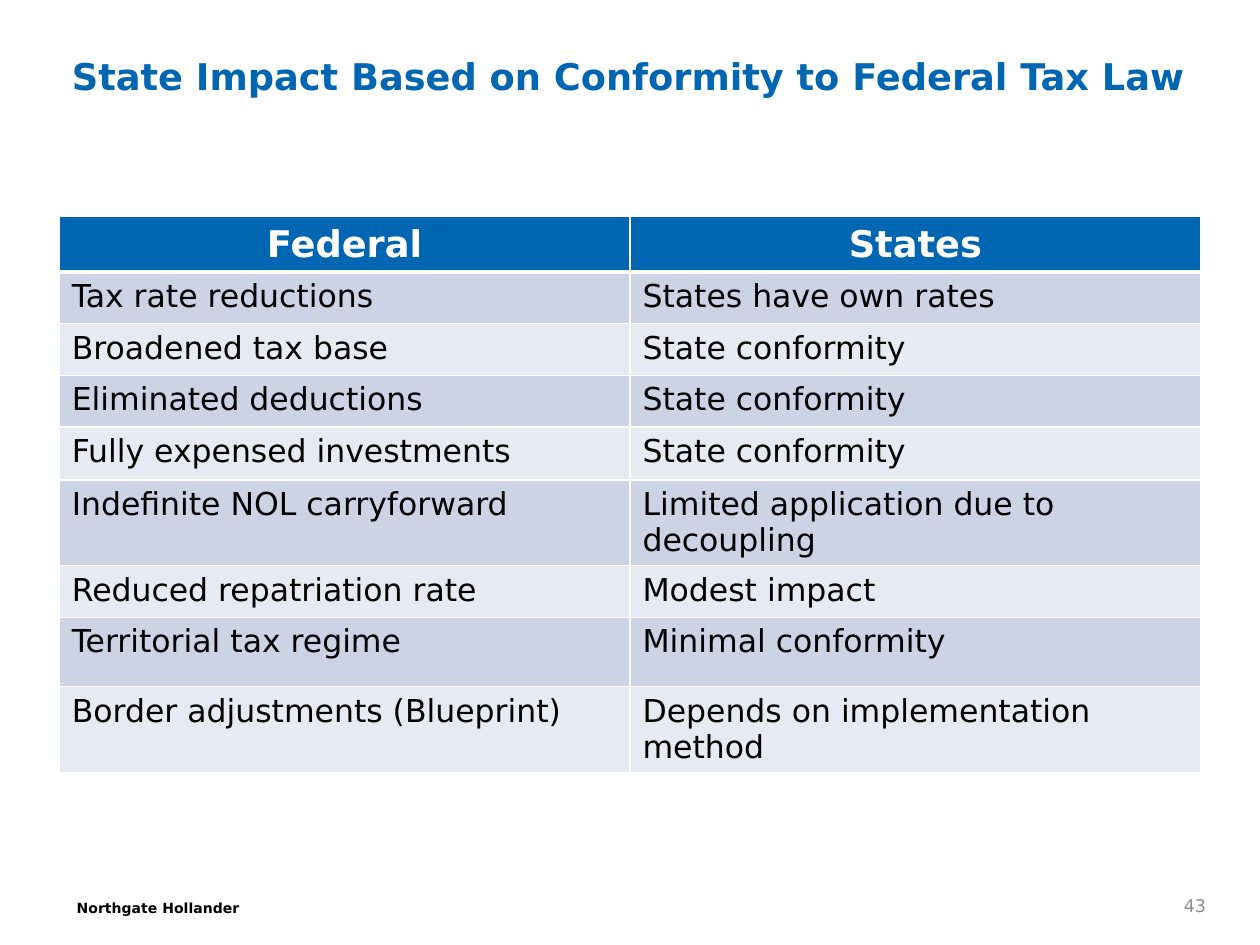
from lxml.etree import SubElement
from pptx import Presentation
from pptx.dml.color import RGBColor
from pptx.enum.text import MSO_ANCHOR, MSO_AUTO_SIZE, PP_ALIGN
from pptx.oxml.ns import qn
from pptx.util import Inches, Pt

COLORS = {
    "blue": "0066B2",
    "white": "FFFFFF",
    "black": "000000",
    "gray": "8C8C8C",
    "band_dark": "CCD3E4",
    "band_light": "E7EAF2",
}

COMPARISON = [
    ("Federal", "States"),
    ("Tax rate reductions", "States have own rates"),
    ("Broadened tax base", "State conformity"),
    ("Eliminated deductions", "State conformity"),
    ("Fully expensed investments", "State conformity"),
    ("Indefinite NOL carryforward", "Limited application due to decoupling"),
    ("Reduced repatriation rate", "Modest impact"),
    ("Territorial tax regime", "Minimal conformity"),
    ("Border adjustments (Blueprint)", "Depends on implementation method"),
]
ROW_HEIGHTS = [0.41, 0.41, 0.41, 0.41, 0.42, 0.41, 0.41, 0.55, 0.41]


class SlideBuilder:
    """Holds the style and the current slide."""

    font_name = "DejaVu Sans"

    def __init__(self, page):
        self.page = page

    def set_text(self, frame, text, size, color, bold=False,
                 align=PP_ALIGN.LEFT):
        frame.word_wrap = True
        para = frame.paragraphs[0]
        para.text = text
        para.alignment = align
        para.font.name = self.font_name
        para.font.size = Pt(size)
        para.font.bold = bold
        para.font.color.rgb = RGBColor.from_string(COLORS[color])
        return para

    def title(self, text, left, top, width, height):
        box = self.page.shapes.title
        box.left, box.top = Inches(left), Inches(top)
        box.width, box.height = Inches(width), Inches(height)
        frame = box.text_frame
        frame.auto_size = MSO_AUTO_SIZE.NONE
        frame.vertical_anchor = MSO_ANCHOR.MIDDLE
        para = self.set_text(frame, text, 21, "blue", bold=True)
        para.line_spacing = 0.9

    def label(self, text, left, top, width, height, size, color,
              anchor=MSO_ANCHOR.TOP, **style):
        box = self.page.shapes.add_textbox(
            Inches(left), Inches(top), Inches(width), Inches(height))
        box.text_frame.vertical_anchor = anchor
        self.set_text(box.text_frame, text, size, color, **style)

    def borders(self, cell, widths):
        properties = cell._tc.get_or_add_tcPr()
        for side, width in widths.items():
            line = SubElement(properties, qn(f"a:ln{side}"), w=str(Pt(width)))
            fill = SubElement(line, qn("a:solidFill"))
            SubElement(fill, qn("a:srgbClr"), val=COLORS["white"])

    def table(self, rows, heights, left, top, width):
        columns = len(rows[0])
        table = self.page.shapes.add_table(
            len(rows), columns, Inches(left), Inches(top),
            Inches(width), Inches(sum(heights))).table
        for column in table.columns:
            column.width = Inches(width / columns)
        for index, (texts, height) in enumerate(zip(rows, heights)):
            table.rows[index].height = Inches(height)
            for cell, text in zip(table.rows[index].cells, texts):
                self.cell(cell, text, index)

    def cell(self, cell, text, row):
        # The header has a heavy rule below; body rows alternate two tints
        self.borders(cell, {"L": 1, "R": 1, "T": 3 if row == 1 else 1,
                            "B": 3 if row == 0 else 1})
        if row == 0:
            fill = "blue"
            self.set_text(cell.text_frame, text, 21, "white", bold=True,
                          align=PP_ALIGN.CENTER)
        else:
            fill = "band_dark" if row % 2 else "band_light"
            self.set_text(cell.text_frame, text, 18, "black")
        cell.fill.solid()
        cell.fill.fore_color.rgb = RGBColor.from_string(COLORS[fill])


def main():
    deck = Presentation()
    deck.slide_width, deck.slide_height = Inches(10), Inches(7.5)
    page = deck.slides.add_slide(deck.slide_layouts[5])
    builder = SlideBuilder(page)

    # Title and comparison table
    builder.title("State Impact Based on Conformity to Federal Tax Law",
                  0.47, 0.44, 9.06, 0.36)
    builder.table(COMPARISON, ROW_HEIGHTS, 0.47, 1.72, 9.06)

    # Footer: firm name and page number
    builder.label("Northgate Hollander", 0.51, 7.09, 2.31, 0.24, 8, "black",
                  bold=True)
    builder.label("43", 8.8, 7.04, 0.87, 0.3, 10, "gray",
                  anchor=MSO_ANCHOR.MIDDLE, align=PP_ALIGN.RIGHT)

    deck.save("out.pptx")


if __name__ == "__main__":
    main()
